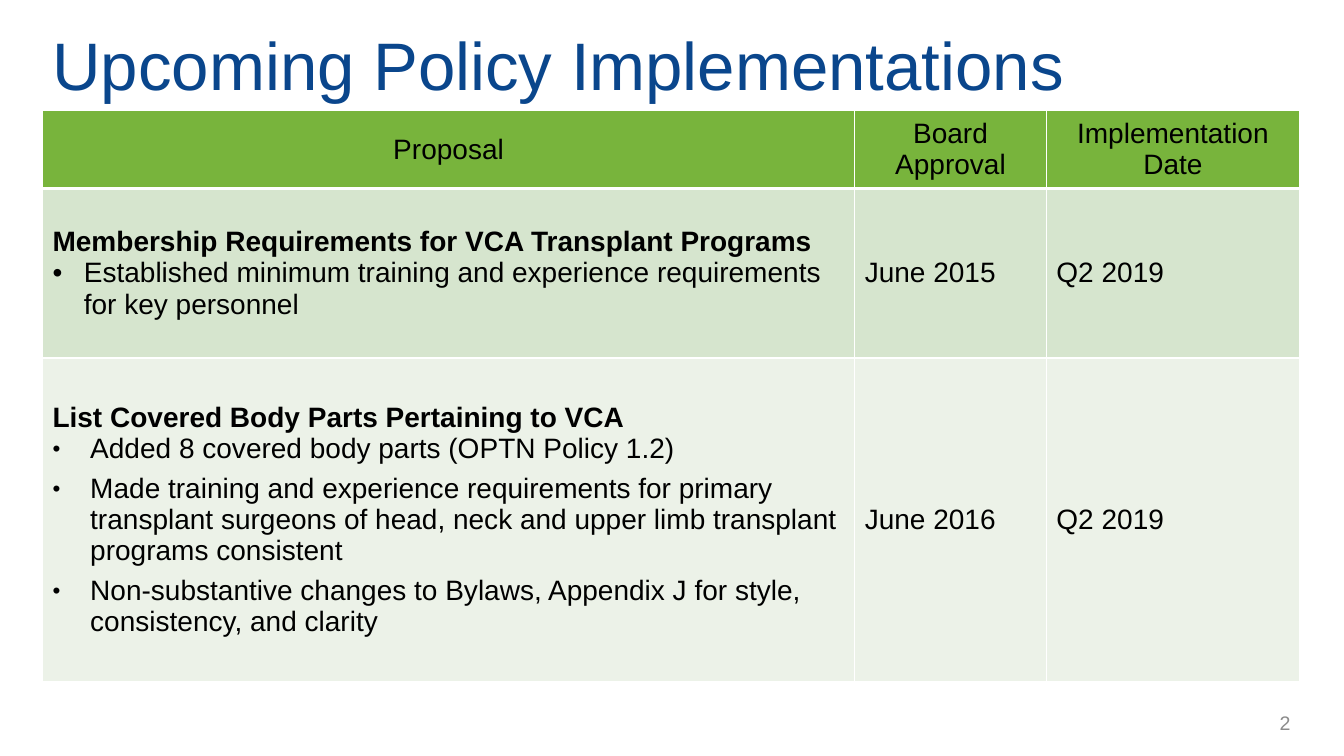
from lxml import etree
from pptx import Presentation
from pptx.dml.color import RGBColor
from pptx.enum.text import MSO_ANCHOR, PP_ALIGN
from pptx.oxml.ns import qn
from pptx.util import Cm, Pt

MIDDLE = MSO_ANCHOR.MIDDLE
LEFT, CENTER, RIGHT = PP_ALIGN.LEFT, PP_ALIGN.CENTER, PP_ALIGN.RIGHT

TITLE = "Upcoming Policy Implementations"
PAGE = "2"
HEADS = ["Proposal", "Board Approval", "Implementation Date"]
# Each proposal: name, points, approval, date, fill, indent (cm), space after, bullet %
ROWS = [
    ("Membership Requirements for VCA Transplant Programs",
     ["Established minimum training and experience requirements for key personnel"],
     "June 2015", "Q2 2019", "D6E5CE", 0.79, 0, 100),
    ("List Covered Body Parts Pertaining to VCA",
     ["Added 8 covered body parts (OPTN Policy 1.2)",
      "Made training and experience requirements for primary transplant surgeons "
      "of head, neck and upper limb transplant programs consistent",
      "Non-substantive changes to Bylaws, Appendix J for style, consistency, and clarity"],
     "June 2016", "Q2 2019", "ECF2E8", 0.95, 6, 80),
]
WIDTHS = [20.47, 4.83, 6.38]
HEIGHTS = [1.96, 4.27, 8.15]
EDGE = 1.07
GREEN, BLUE, GRAY, BLACK, WHITE = "78B43C", "0A468C", "8C8C8C", "000000", "FFFFFF"


def color(code):
    return RGBColor.from_string(code)


def write(para, text, size=20, code=BLACK, align=LEFT, bold=False):
    para.text = text
    para.alignment = align
    font = para.font
    font.name, font.size, font.bold = "Arial", Pt(size), bold
    font.color.rgb = color(code)


def bullet(para, indent, percent):
    """Give a paragraph a hanging round bullet."""
    props = para._p.get_or_add_pPr()
    props.set("marL", str(Cm(indent)))
    props.set("indent", str(-Cm(indent)))
    etree.SubElement(props, qn("a:buSzPct"), val=str(percent * 1000))
    etree.SubElement(props, qn("a:buFont"), typeface="Arial")
    etree.SubElement(props, qn("a:buChar"), char="•")


def dress(cell, code, base=1):
    """Set a cell's anchor, white borders (base is the bottom width) and fill."""
    cell.vertical_anchor = MIDDLE
    props = cell._tc.get_or_add_tcPr()
    for side, width in (("L", 1), ("R", 1), ("T", 1), ("B", base)):
        line = etree.SubElement(props, qn("a:ln" + side), w=str(Pt(width)))
        fill = etree.SubElement(line, qn("a:solidFill"))
        etree.SubElement(fill, qn("a:srgbClr"), val=WHITE)
    cell.fill.solid()
    cell.fill.fore_color.rgb = color(code)


def label(slide, box, text, size, code, align=LEFT):
    frame = slide.shapes.add_textbox(*map(Cm, box)).text_frame
    frame.word_wrap = True
    frame.vertical_anchor = MIDDLE
    write(frame.paragraphs[0], text, size, code, align)


def fill_table(slide):
    table = slide.shapes.add_table(
        len(HEIGHTS), len(WIDTHS), Cm(EDGE), Cm(2.79),
        Cm(sum(WIDTHS)), Cm(sum(HEIGHTS))).table
    for col, width in zip(table.columns, WIDTHS):
        col.width = Cm(width)
    for row, height in zip(table.rows, HEIGHTS):
        row.height = Cm(height)

    for c, head in enumerate(HEADS):
        cell = table.cell(0, c)
        dress(cell, GREEN, 3)
        write(cell.text_frame.paragraphs[0], head, align=CENTER)

    for r, (name, points, board, date, code, indent, after, percent) in enumerate(ROWS, 1):
        for c, text in enumerate((name, board, date)):
            cell = table.cell(r, c)
            dress(cell, code)
            write(cell.text_frame.paragraphs[0], text, bold=c == 0)
        frame = table.cell(r, 0).text_frame
        for point in points:
            para = frame.add_paragraph()
            bullet(para, indent, percent)
            para.space_after = Pt(after)
            write(para, point)


def main():
    deck = Presentation()
    deck.slide_width, deck.slide_height = Cm(33.87), Cm(19.05)
    slide = deck.slides.add_slide(deck.slide_layouts[6])
    fill_table(slide)
    label(slide, (EDGE, 0.43, 32.36, 2.36), TITLE, 48, BLUE)
    label(slide, (27.03, 17.7, 5.74, 1.02), PAGE, 14, GRAY, RIGHT)
    deck.save("out.pptx")


if __name__ == "__main__":
    main()
